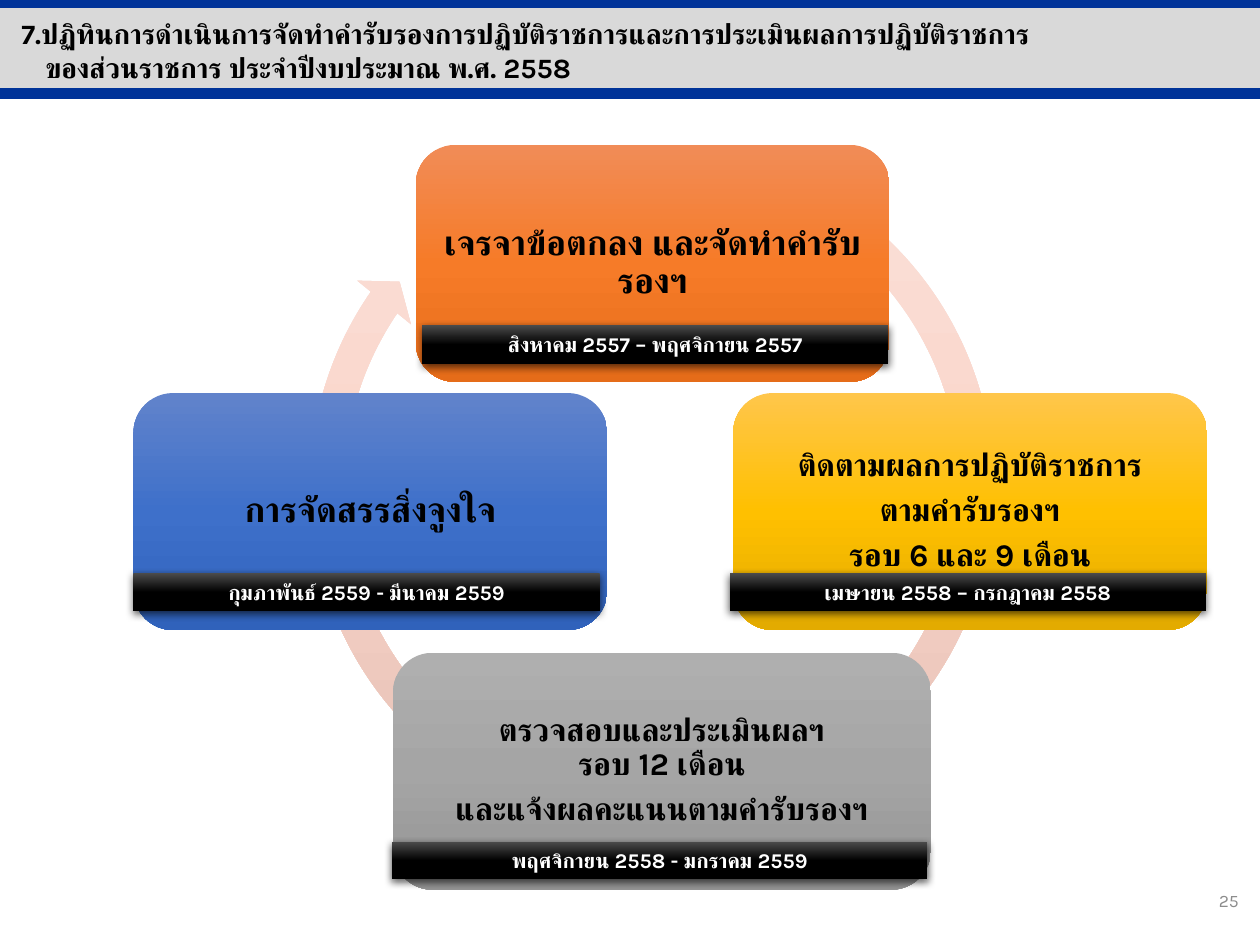
from copy import deepcopy

from lxml import etree
from pptx import Presentation
from pptx.dml.color import RGBColor
from pptx.enum import lang, shapes, text
from pptx.oxml.ns import qn
from pptx.util import Pt

FONT = "Karla"
BLACK = RGBColor(0, 0, 0)
WHITE = RGBColor(255, 255, 255)
GREY = RGBColor(0x8C, 0x8C, 0x8C)
BAND = RGBColor(0xD9, 0xD9, 0xD9)
NAVY = RGBColor(0x00, 0x33, 0x99)


def shades(*codes):
    return [RGBColor.from_string(code) for code in codes]


PINK = shades("FAE0D8", "FAD6CB", "E2BCB1")
ORANGE = shades("F18C57", "F67B28", "E56C19")
GOLD = shades("FFC64B", "FFC000", "E3AB00")
STEEL = shades("AFAFAF", "A5A5A5", "939393")
BLUE = shades("6183CB", "3E70CA", "3062BB")
JET = shades("4B4B4B", "000000", "000000")

CARD_W, CARD_H = 270.7, 135.4

# left, top, width, colours, text size, lines, date, bar (dx, dy, width, height)
CARDS = [
    (237.6, 82.8, CARD_W, ORANGE, 20, ["เจรจาข้อตกลง และจัดทำคำรับรองฯ"],
     "สิงหาคม 2557 – พฤศจิกายน 2557", (3.6, 103, 266.4, 22.3)),
    (224.6, 373, 307.4, STEEL, 18,
     ["ตรวจสอบและประเมินผลฯ\vรอบ 12 เดือน", "และแจ้งผลคะแนนตามคำรับรองฯ"],
     "พฤศจิกายน 2558 - มกราคม 2559", (-0.7, 108, 306, 21.6)),
    (419, 224.6, CARD_W, GOLD, 18,
     ["ติดตามผลการปฏิบัติราชการ", "ตามคำรับรองฯ", "รอบ 6 และ 9 เดือน"],
     "เมษายน 2558 – กรกฎาคม 2558", (-2.1, 103, 272.2, 21.6)),
    (76.3, 224.6, CARD_W, BLUE, 20, ["การจัดสรรสิ่งจูงใจ"],
     "กุมภาพันธ์ 2559 - มีนาคม 2559", (0, 103, 266.4, 21.6)),
]


def write(frame, lines, size, color=BLACK, bold=True, align=text.PP_ALIGN.CENTER,
          anchor=text.MSO_ANCHOR.TOP, inset=None, lead=None, after=None, grow=False):
    frame.word_wrap = True
    frame.vertical_anchor = anchor
    frame.auto_size = (text.MSO_AUTO_SIZE.SHAPE_TO_FIT_TEXT if grow
                       else text.MSO_AUTO_SIZE.NONE)
    if inset is not None:
        frame.margin_left = frame.margin_right = Pt(inset)
        frame.margin_top = frame.margin_bottom = Pt(inset)
    for i, line in enumerate(lines):
        para = frame.paragraphs[0] if i == 0 else frame.add_paragraph()
        para.text = line
        para.alignment = align
        if lead:
            para.line_spacing = lead
        if after:
            para.space_after = Pt(after)
        for run in para.runs:
            font = run.font
            font.name, font.size, font.bold = FONT, Pt(size), bold
            font.color.rgb = color
            font.language_id = lang.MSO_LANGUAGE_ID.THAI
            # Thai letters use the complex script font
            etree.SubElement(run._r.rPr, qn("a:cs"), typeface=FONT)


def shape(slide, kind, box, fill):
    form = slide.shapes.add_shape(kind, *map(Pt, box))
    form.shadow.inherit = False
    form.line.fill.background()
    if isinstance(fill, RGBColor):
        form.fill.solid()
        form.fill.fore_color.rgb = fill
        return form
    form.fill.gradient()
    form.fill.gradient_angle = 270
    stops = form._element.spPr.find(".//" + qn("a:gsLst"))
    stops.append(deepcopy(stops[1]))
    for stop, color, place in zip(form.fill.gradient_stops, fill, (0, 0.5, 1)):
        stop.color.rgb = color
        stop.position = place
    return form


def shade(form):
    """Soft shadow just below the shape."""
    effects = form._element.spPr.find(qn("a:effectLst"))
    outer = etree.SubElement(effects, qn("a:outerShdw"), blurRad=str(Pt(4.5)),
                             dist=str(Pt(1.5)), dir="5400000", rotWithShape="0")
    color = etree.SubElement(outer, qn("a:srgbClr"), val="000000")
    etree.SubElement(color, qn("a:alpha"), val="63000")


def rule(slide, left, y, width):
    line = slide.shapes.add_connector(shapes.MSO_CONNECTOR.STRAIGHT,
                                      Pt(left), Pt(y), Pt(left + width), Pt(y))
    line.line.color.rgb = NAVY
    line.line.width = Pt(6)
    etree.SubElement(line._element.spPr, qn("a:effectLst"))


def header(slide, left, top, width, height):
    shape(slide, shapes.MSO_SHAPE.RECTANGLE, (left, top, width, height), BAND)
    for y in (top + height + 0.7, top - 2.2):
        rule(slide, left, y, width)
    # Title goes in front of the band, second line indented
    title = slide.shapes.title
    slide.shapes._spTree.append(title._element)
    title.left, title.top = Pt(left + 5), Pt(top + 2.2)
    title.width, title.height = Pt(width - 24), Pt(46)
    write(title.text_frame,
          ["7.ปฏิทินการดำเนินการจัดทำคำรับรองการปฏิบัติราชการและการประเมินผลการปฏิบัติราชการ"
           "\vของส่วนราชการ ประจำปีงบประมาณ พ.ศ. 2558"],
          16, align=text.PP_ALIGN.LEFT, grow=True)
    props = title.text_frame.paragraphs[0]._p.get_or_add_pPr()
    props.set("marL", str(Pt(13.7)))
    props.set("indent", str(-Pt(13.7)))


def ring(slide, *box):
    arrow = shape(slide, shapes.MSO_SHAPE.CIRCULAR_ARROW, box, PINK)
    for i, value in enumerate((0.047, 2.729, 128.74, 180.019, 0.048)):
        arrow.adjustments[i] = value


def card(slide, left, top, width, fill, size, lines):
    form = shape(slide, shapes.MSO_SHAPE.ROUNDED_RECTANGLE,
                 (left, top, width, CARD_H), fill)
    write(form.text_frame, lines, size, anchor=text.MSO_ANCHOR.MIDDLE,
          inset=0, lead=0.9, after=size * 0.35)


def bar(slide, date, *box):
    form = shape(slide, shapes.MSO_SHAPE.RECTANGLE, box, JET)
    shade(form)
    write(form.text_frame, [date], 12, color=WHITE, grow=True)


def number(slide, *box):
    note = slide.shapes.add_textbox(*map(Pt, box))
    write(note.text_frame, ["25"], 10, color=GREY, bold=False,
          align=text.PP_ALIGN.RIGHT, anchor=text.MSO_ANCHOR.MIDDLE)


def main():
    deck = Presentation()
    deck.slide_width, deck.slide_height = Pt(720), Pt(540)
    slide = deck.slides.add_slide(deck.slide_layouts[5])
    header(slide, 0, 3.6, 720, 49)
    number(slide, 553, 500.4, 162, 28.8)
    ring(slide, 167, 72.7, 411, 411)
    for left, top, width, fill, size, lines, _, _ in CARDS:
        card(slide, left, top, width, fill, size, lines)
    for left, top, *_, date, (dx, dy, wide, high) in CARDS:
        bar(slide, date, left + dx, top + dy, wide, high)
    deck.save("out.pptx")


if __name__ == "__main__":
    main()
